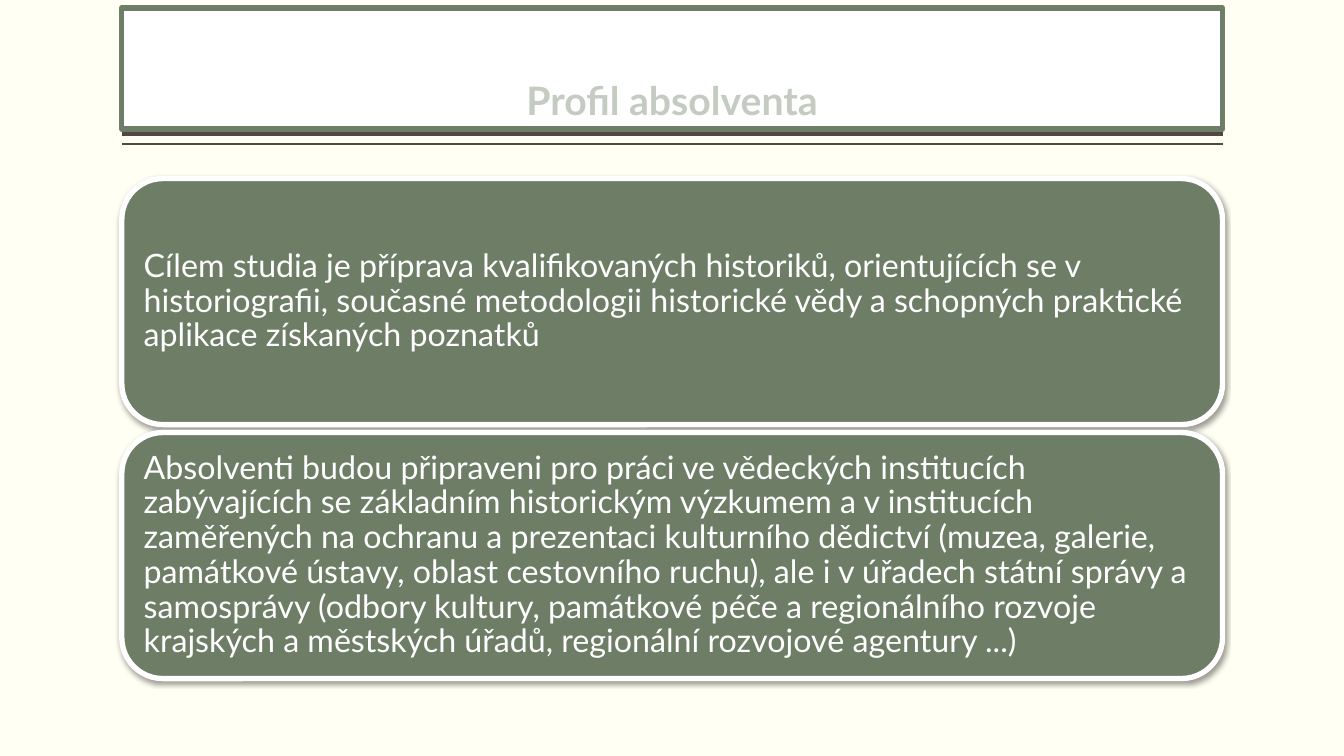
from dataclasses import dataclass

from lxml import etree
from pptx import Presentation
from pptx import util as u
from pptx.dml.color import RGBColor
from pptx.enum import shapes, text
from pptx.oxml import parse_xml
from pptx.oxml.ns import nsdecls, qn


@dataclass(frozen=True)
class Theme:
    font: str = "Lato"
    background: str = "FFFFF3"
    green: str = "6D7D66"
    pale_green: str = "C4CCC1"
    brown: str = "514843"
    white: str = "FFFFFF"
    title_size: float = 28
    body_size: float = 23


@dataclass(frozen=True)
class Panel:
    text: str
    preset: shapes.MSO_SHAPE
    top: float
    height: float
    fill: str
    line: str
    line_width: float
    size: float
    color: str
    bold: bool
    align: text.PP_ALIGN
    anchor: text.MSO_ANCHOR
    inset_x: float
    inset_y: float


@dataclass(frozen=True)
class Rule:
    top: float
    width: float


THEME = Theme()
LEFT, WIDTH = 3.07, 27.74
CARD_TOP, CARD_HEIGHT, CARD_PITCH = 4.5, 6.2, 6.4

TITLE = Panel(
    "Profil absolventa", shapes.MSO_SHAPE.RECTANGLE, 0.2, 3.05,
    THEME.white, THEME.green, 3.78, THEME.title_size, THEME.pale_green, True,
    text.PP_ALIGN.CENTER, text.MSO_ANCHOR.BOTTOM, 0, 0.13,
)
RULES = [Rule(3.38, 3), Rule(3.63, 1)]
CARD_TEXTS = [
    "Cílem studia je příprava kvalifikovaných historiků, orientujících se "
    "v historiografii, současné metodologii historické vědy a schopných "
    "praktické aplikace získaných poznatků",
    "Absolventi budou připraveni pro práci ve vědeckých institucích "
    "zabývajících se základním historickým výzkumem a v institucích "
    "zaměřených na ochranu a prezentaci kulturního dědictví (muzea, galerie, "
    "památkové ústavy, oblast cestovního ruchu), ale i v úřadech státní správy a "
    "samosprávy (odbory kultury, památkové péče a regionálního rozvoje "
    "krajských a městských úřadů, regionální rozvojové agentury ...)",
]
CARDS = [
    Panel(
        words, shapes.MSO_SHAPE.ROUNDED_RECTANGLE,
        CARD_TOP + i * CARD_PITCH, CARD_HEIGHT,
        THEME.green, THEME.white, 3.82, THEME.body_size, THEME.white, False,
        text.PP_ALIGN.LEFT, text.MSO_ANCHOR.MIDDLE, 0.25, 0.25,
    )
    for i, words in enumerate(CARD_TEXTS)
]


def rgb(value: str) -> RGBColor:
    """Turn a hex value into a colour."""
    return RGBColor.from_string(value)


def draw_rule(slide, rule: Rule) -> None:
    """Draw a horizontal rule across the content width."""
    y = u.Cm(rule.top)
    line = slide.shapes.add_connector(
        shapes.MSO_CONNECTOR.STRAIGHT, u.Cm(LEFT + WIDTH), y, u.Cm(LEFT), y
    )
    line.line.color.rgb = rgb(THEME.brown)
    line.line.width = u.Pt(rule.width)
    etree.SubElement(line._element.spPr, qn("a:effectLst"))


def draw_panel(slide, panel: Panel):
    """Draw a framed panel with its text and return the shape."""
    sp = slide.shapes.add_shape(
        panel.preset, u.Cm(LEFT), u.Cm(panel.top), u.Cm(WIDTH), u.Cm(panel.height)
    )
    sp.shadow.inherit = False
    sp.fill.solid()
    sp.fill.fore_color.rgb = rgb(panel.fill)
    sp.line.color.rgb = rgb(panel.line)
    sp.line.width = u.Pt(panel.line_width)
    tf = sp.text_frame
    tf.word_wrap = True
    tf.vertical_anchor = panel.anchor
    tf.margin_left = tf.margin_right = u.Cm(panel.inset_x)
    tf.margin_top = tf.margin_bottom = u.Cm(panel.inset_y)
    p = tf.paragraphs[0]
    p.text = panel.text
    p.alignment = panel.align
    p.line_spacing = 0.9
    p.font.name = THEME.font
    p.font.size = u.Pt(panel.size)
    p.font.bold = panel.bold
    p.font.color.rgb = rgb(panel.color)
    return sp


def add_shadow(sp) -> None:
    """Give a shape a soft shadow straight below it."""
    sp._element.spPr.find(qn("a:effectLst")).append(parse_xml(
        f'<a:outerShdw {nsdecls("a")} blurRad="{u.Pt(3.5)}" dist="{u.Pt(2)}" '
        'dir="5400000" algn="t" rotWithShape="0"><a:srgbClr val="000000">'
        '<a:alpha val="38000"/></a:srgbClr></a:outerShdw>'
    ))


def outline_text(sp, color: str, width: float) -> None:
    """Outline the letters of a shape's text."""
    props = sp.text_frame.paragraphs[0]._p.pPr.find(qn("a:defRPr"))
    props.insert(0, parse_xml(
        f'<a:ln {nsdecls("a")} w="{u.Pt(width)}"><a:solidFill>'
        f'<a:srgbClr val="{color}"/></a:solidFill></a:ln>'
    ))


def main() -> None:
    """Build the graduate profile slide and save it."""
    prs = Presentation()
    prs.slide_width, prs.slide_height = u.Cm(33.87), u.Cm(19.05)
    slide = prs.slides.add_slide(prs.slide_layouts[6])
    slide.background.fill.solid()
    slide.background.fill.fore_color.rgb = rgb(THEME.background)
    for rule in RULES:
        draw_rule(slide, rule)
    outline_text(draw_panel(slide, TITLE), THEME.green, 1.75)
    for card in CARDS:
        add_shadow(draw_panel(slide, card))
    prs.save("out.pptx")


if __name__ == "__main__":
    main()
